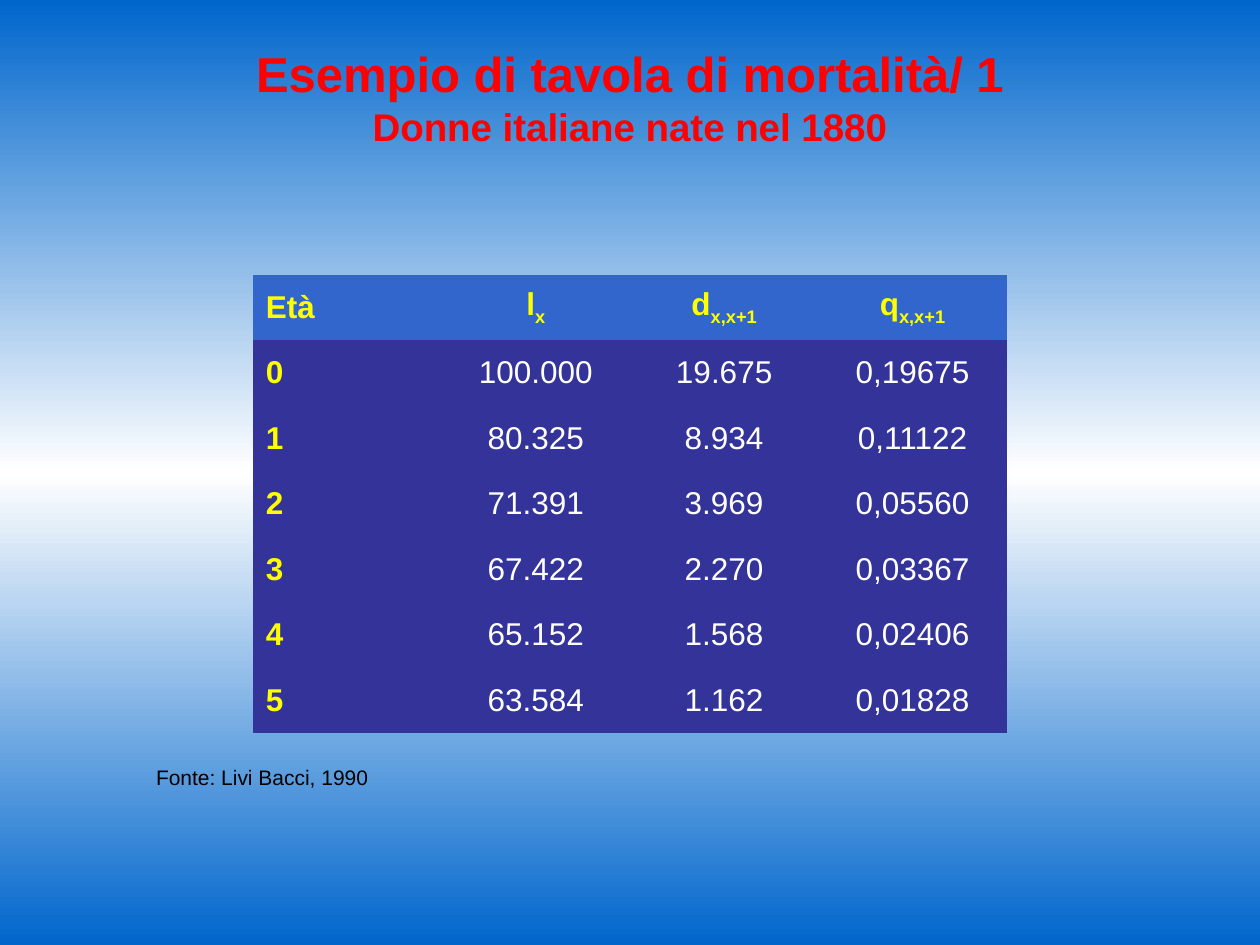
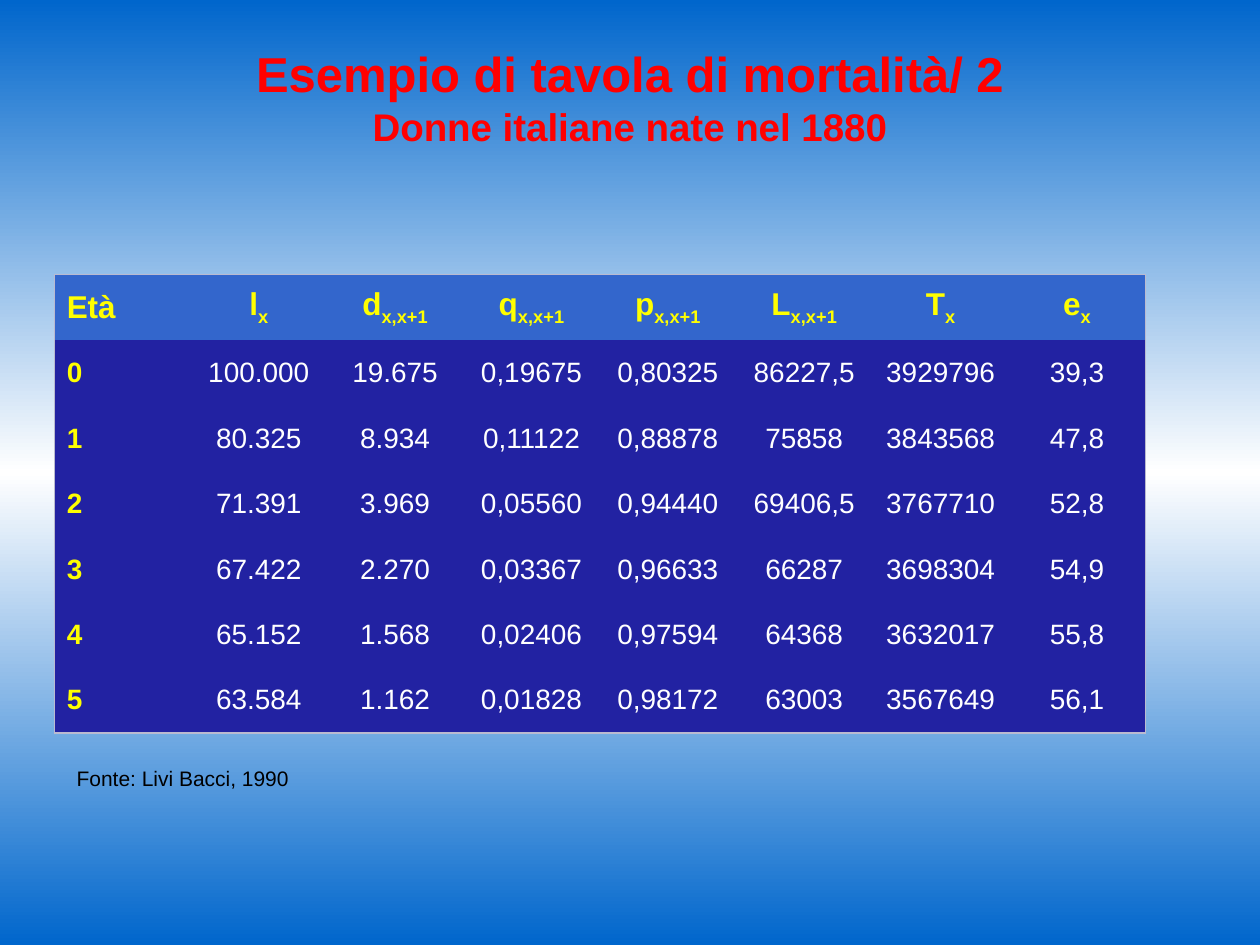
"""Build two slides with life tables for Italian women born in 1880."""
import copy
from dataclasses import dataclass

import lxml.etree
import pptx
import pptx.dml.color
import pptx.enum.text
import pptx.oxml.ns
import pptx.util

Inches = pptx.util.Inches
qn = pptx.oxml.ns.qn
ALIGN = pptx.enum.text.PP_ALIGN
MIDDLE = pptx.enum.text.MSO_ANCHOR.MIDDLE
AUTO_SIZE = pptx.enum.text.MSO_AUTO_SIZE


@dataclass(frozen=True)
class Theme:
    """Colours, font and type sizes shared by the slides."""

    font: str = "Arial"
    edge: str = "0066CC"
    white: str = "FFFFFF"
    black: str = "000000"
    title: str = "FF0000"
    label: str = "FFFF00"
    header_fill: str = "3366CC"
    body_fill: str = "333399"
    wide_body_fill: str = "2222A2"
    border: str = "BABAD0"
    title_size: int = 28
    subtitle_size: int = 22
    table_size: int = 18
    wide_table_size: int = 16
    source_size: int = 12


THEME = Theme()
PLAIN_TABLE_STYLE = "{2D5ABB26-0587-4C30-8999-92F81FD0307C}"
TABLE_TOP = 2.18
ROW_HEIGHT = 0.52
SUBTITLE = "Donne italiane nate nel 1880"
SOURCE = "Fonte: Livi Bacci, 1990"

HEADERS = [("Età", ""), ("l", "x"), ("d", "x,x+1"), ("q", "x,x+1"),
           ("p", "x,x+1"), ("L", "x,x+1"), ("T", "x"), ("e", "x")]
LIFE_TABLE = [
    ["0", "100.000", "19.675", "0,19675", "0,80325", "86227,5", "3929796", "39,3"],
    ["1", "80.325", "8.934", "0,11122", "0,88878", "75858", "3843568", "47,8"],
    ["2", "71.391", "3.969", "0,05560", "0,94440", "69406,5", "3767710", "52,8"],
    ["3", "67.422", "2.270", "0,03367", "0,96633", "66287", "3698304", "54,9"],
    ["4", "65.152", "1.568", "0,02406", "0,97594", "64368", "3632017", "55,8"],
    ["5", "63.584", "1.162", "0,01828", "0,98172", "63003", "3567649", "56,1"],
]


def rgb(value):
    """Return the colour for a hexadecimal string."""
    return pptx.dml.color.RGBColor.from_string(value)


def write(paragraph, text, size, color, bold=False, subscript=False):
    """Add one formatted run to a paragraph."""
    run = paragraph.add_run()
    run.text = text
    run.font.name = THEME.font
    run.font.size = pptx.util.Pt(size)
    run.font.bold = bold
    run.font.color.rgb = rgb(color)
    if subscript:
        run._r.get_or_add_rPr().set("baseline", "-25000")


def style_master(master):
    """Give the master its gradient background and title size."""
    fill = master.background.fill
    fill.gradient()
    fill.gradient_angle = 90
    first, last = fill.gradient_stops
    first.color.rgb = last.color.rgb = rgb(THEME.edge)
    first.position, last.position = 0, 1
    stops = master.element.find(".//" + qn("a:gsLst"))
    stops.insert(1, copy.deepcopy(stops[0]))
    middle = fill.gradient_stops[1]
    middle.position = 0.5
    middle.color.rgb = rgb(THEME.white)
    title_style = master.element.find(".//" + qn("p:titleStyle"))
    title_style.find(".//" + qn("a:defRPr")).set("sz", str(THEME.title_size * 100))


def add_title(slide, title):
    """Fill the title placeholder with a title and its subtitle."""
    shape = slide.shapes.title
    shape.left, shape.top = Inches(0.5), Inches(0.3)
    shape.width, shape.height = Inches(9), Inches(0.93)
    frame = shape.text_frame
    frame.auto_size = AUTO_SIZE.NONE
    frame.vertical_anchor = MIDDLE
    paragraph = frame.paragraphs[0]
    paragraph.alignment = ALIGN.CENTER
    write(paragraph, title, THEME.title_size, THEME.title, bold=True)
    paragraph.add_line_break()
    write(paragraph, SUBTITLE, THEME.subtitle_size, THEME.title, bold=True)


def add_border(cell, side):
    """Draw a thin line on one side of a cell."""
    properties = cell._tc.get_or_add_tcPr()
    line = lxml.etree.SubElement(properties, qn(f"a:ln{side}"), w="9525")
    fill = lxml.etree.SubElement(line, qn("a:solidFill"))
    lxml.etree.SubElement(fill, qn("a:srgbClr"), val=THEME.border)


def outline_table(table):
    """Draw a border around the whole table."""
    last_row, last_column = len(table.rows) - 1, len(table.columns) - 1
    for row in range(last_row + 1):
        for column in range(last_column + 1):
            edges = {"L": column == 0, "R": column == last_column,
                     "T": row == 0, "B": row == last_row}
            for side, outer in edges.items():
                if outer:
                    add_border(table.cell(row, column), side)


def prepare_cell(cell, column, fill):
    """Fill a cell and return its aligned paragraph."""
    cell.fill.solid()
    cell.fill.fore_color.rgb = rgb(fill)
    cell.vertical_anchor = MIDDLE
    paragraph = cell.text_frame.paragraphs[0]
    paragraph.alignment = ALIGN.CENTER if column else ALIGN.LEFT
    return paragraph


def add_life_table(slide, left, width, columns, size, body_fill, outlined=False):
    """Add the life table limited to its first columns."""
    rows = len(LIFE_TABLE) + 1
    frame = slide.shapes.add_table(rows, columns, Inches(left), Inches(TABLE_TOP),
                                   Inches(width), Inches(ROW_HEIGHT * rows))
    table = frame.table
    table.first_row = table.horz_banding = False
    table._tbl.tblPr.find(qn("a:tableStyleId")).text = PLAIN_TABLE_STYLE
    if outlined:
        outline_table(table)
    for column, (symbol, index) in enumerate(HEADERS[:columns]):
        paragraph = prepare_cell(table.cell(0, column), column, THEME.header_fill)
        write(paragraph, symbol, THEME.table_size, THEME.label, bold=True)
        if index:
            write(paragraph, index, THEME.table_size, THEME.label, bold=True,
                  subscript=True)
    for row, values in enumerate(LIFE_TABLE, start=1):
        for column, value in enumerate(values[:columns]):
            paragraph = prepare_cell(table.cell(row, column), column, body_fill)
            color = THEME.white if column else THEME.label
            write(paragraph, value, size, color, bold=column == 0)


def add_source(slide, left, top):
    """Add the source line below the table."""
    shape = slide.shapes.add_textbox(Inches(left), Inches(top), Inches(1.97), Inches(0.3))
    frame = shape.text_frame
    frame.word_wrap = True
    frame.auto_size = AUTO_SIZE.SHAPE_TO_FIT_TEXT
    write(frame.paragraphs[0], SOURCE, THEME.source_size, THEME.black)


def main():
    """Build and save the presentation."""
    presentation = pptx.Presentation()
    presentation.slide_width, presentation.slide_height = Inches(10), Inches(7.5)
    style_master(presentation.slide_master)
    layout = presentation.slide_layouts.get_by_name("Title Only")

    slide = presentation.slides.add_slide(layout)
    add_title(slide, "Esempio di tavola di mortalità/ 1")
    add_life_table(slide, 2.01, 5.98, 4, THEME.table_size, THEME.body_fill)
    add_source(slide, 1.14, 6.02)

    slide = presentation.slides.add_slide(layout)
    add_title(slide, "Esempio di tavola di mortalità/ 2")
    add_life_table(slide, 0.43, 8.66, len(HEADERS), THEME.wide_table_size,
                   THEME.wide_body_fill, outlined=True)
    add_source(slide, 0.51, 6.03)

    presentation.save("out.pptx")


if __name__ == "__main__":
    main()
